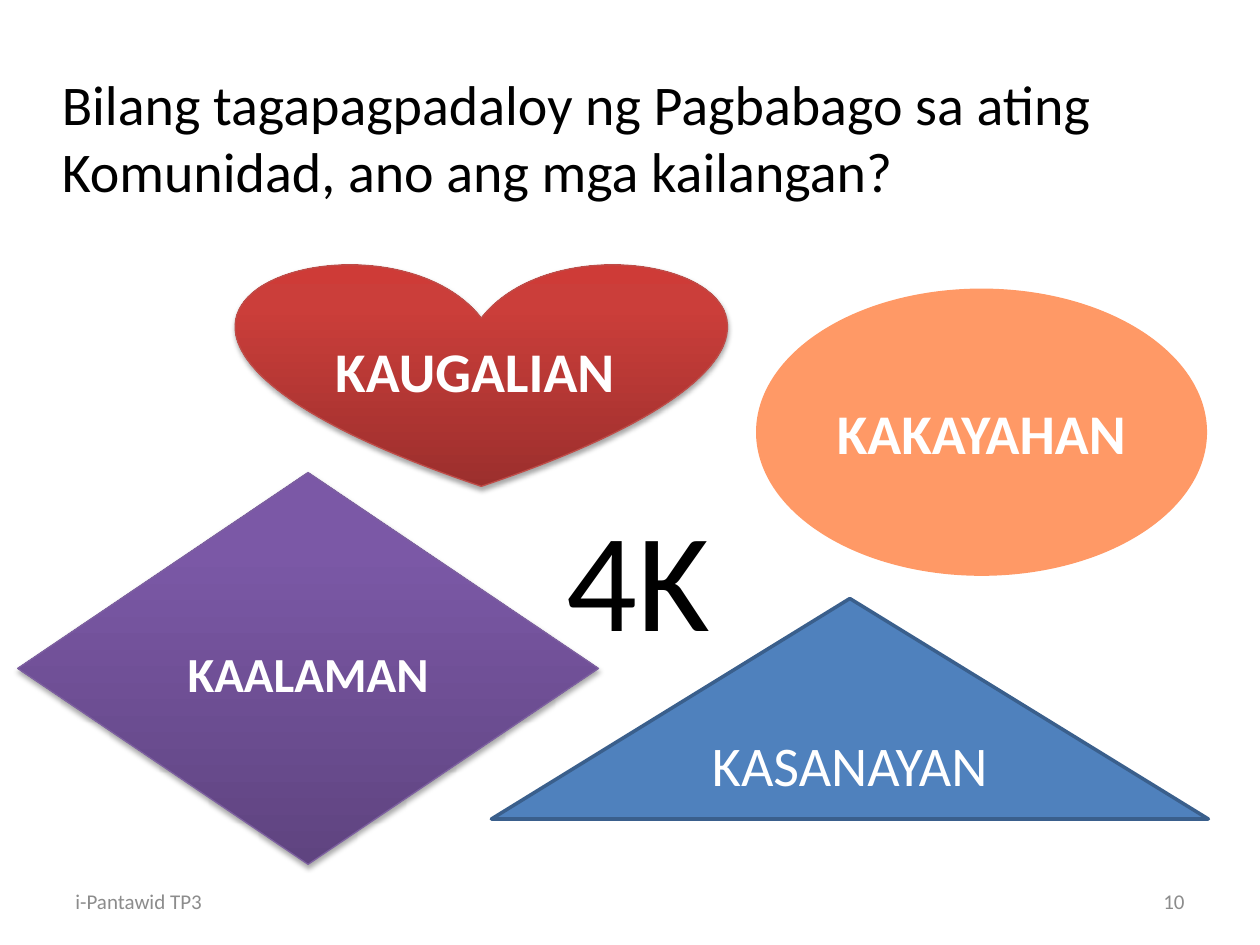
import copy

import lxml.etree
import pptx
import pptx.dml.color
import pptx.enum.shapes
import pptx.enum.text
import pptx.oxml.ns
import pptx.util

Inches = pptx.util.Inches
Pt = pptx.util.Pt
RGBColor = pptx.dml.color.RGBColor
Shape = pptx.enum.shapes.MSO_SHAPE
Align = pptx.enum.text.PP_ALIGN
Anchor = pptx.enum.text.MSO_ANCHOR
qn = pptx.oxml.ns.qn

BLACK = RGBColor(0x00, 0x00, 0x00)
WHITE = RGBColor(0xFF, 0xFF, 0xFF)
GRAY = RGBColor(0x8C, 0x8C, 0x8C)
ORANGE = RGBColor(0xFF, 0x99, 0x66)
BLUE = RGBColor(0x4F, 0x81, 0xBD)
DARK_BLUE = RGBColor(0x3A, 0x5F, 0x8C)
PURPLE_LINE = RGBColor(0x7D, 0x60, 0xA0)
RED_LINE = RGBColor(0xBF, 0x4C, 0x48)
PURPLES = (RGBColor(0x5F, 0x44, 0x80), RGBColor(0x7B, 0x58, 0xA6), RGBColor(0x7C, 0x57, 0xA8))
REDS = (RGBColor(0x9C, 0x2F, 0x2D), RGBColor(0xCB, 0x3E, 0x3A), RGBColor(0xCE, 0x3B, 0x37))
GRADIENT_POSITIONS = (0, 0.8, 1)

TITLE = "Bilang tagapagpadaloy ng Pagbabago sa ating Komunidad, ano ang mga kailangan?"
SPACED = {"line_spacing": 1.15, "space_after": 10}
NEEDS = [
    {"kind": Shape.DIAMOND, "area": (0.14, 3.75, 4.61, 3.11), "colors": PURPLES,
     "line": (PURPLE_LINE, 0.75), "text": "KAALAMAN",
     "format": {"size": 28, "bold": True, **SPACED}},
    {"kind": Shape.HEART, "area": (1.88, 2.08, 3.88, 1.78), "colors": REDS,
     "line": (RED_LINE, 0.75), "text": "KAUGALIAN ",
     "format": {"size": 32, "bold": True, **SPACED}},
    {"kind": Shape.OVAL, "area": (6, 2.29, 3.58, 2.28), "colors": (ORANGE,),
     "line": None, "text": "KAKAYAHAN", "format": {"size": 32, "bold": True}},
    {"kind": Shape.ISOSCELES_TRIANGLE, "area": (3.9, 4.75, 5.69, 1.75), "colors": (BLUE,),
     "line": (DARK_BLUE, 2), "text": "KASANAYAN", "format": {"size": 32}},
]
LABELS = [
    ("4K", (4.4, 3.85, 1.35, 1.45), {"size": 80, "color": BLACK, "wrap": False}),
    ("10", (7.17, 6.95, 2.33, 0.4),
     {"size": 12, "color": GRAY, "align": Align.RIGHT, "anchor": Anchor.MIDDLE}),
    ("i-Pantawid TP3", (0.5, 6.95, 2.33, 0.4),
     {"size": 12, "color": GRAY, "anchor": Anchor.MIDDLE}),
]


def write_text(box, text, *, size, color, bold=False, align=Align.LEFT,
               anchor=Anchor.TOP, wrap=True, line_spacing=None, space_after=None):
    frame = box.text_frame
    frame.word_wrap = wrap
    frame.auto_size = pptx.enum.text.MSO_AUTO_SIZE.NONE
    frame.vertical_anchor = anchor
    para = frame.paragraphs[0]
    para.alignment = align
    if line_spacing:
        para.line_spacing = line_spacing
    if space_after:
        para.space_after = Pt(space_after)
    span = para.add_run()
    span.text = text
    span.font.name = "Calibri"
    span.font.size = Pt(size)
    span.font.bold = bold
    span.font.color.rgb = color


def fill_gradient(shape, colors):
    shape.fill.gradient()
    shape.fill.gradient_angle = 90
    stop_list = shape._element.spPr.find(".//" + qn("a:gsLst"))
    stop_list.append(copy.deepcopy(stop_list[-1]))
    for stop, position, color in zip(shape.fill.gradient_stops, GRADIENT_POSITIONS, colors):
        stop.position = position
        stop.color.rgb = color


def add_shadow(shape):
    effects = shape._element.spPr.find(qn("a:effectLst"))
    shadow = lxml.etree.SubElement(
        effects, qn("a:outerShdw"), blurRad=str(Pt(3.1)), dist=str(Pt(1.8)),
        dir="5400000", rotWithShape="0")
    color = lxml.etree.SubElement(shadow, qn("a:srgbClr"), val="000000")
    lxml.etree.SubElement(color, qn("a:alpha"), val="35000")


def add_need(page, need):
    shape = page.shapes.add_shape(need["kind"], *map(Inches, need["area"]))
    shape.shadow.inherit = False
    if len(need["colors"]) > 1:
        fill_gradient(shape, need["colors"])
        add_shadow(shape)
    else:
        shape.fill.solid()
        shape.fill.fore_color.rgb = need["colors"][0]
    if need["line"]:
        color, width = need["line"]
        shape.line.color.rgb = color
        shape.line.width = Pt(width)
    else:
        shape.line.fill.background()
    write_text(shape, need["text"], color=WHITE, align=Align.CENTER,
               anchor=Anchor.MIDDLE, **need["format"])


def main():
    deck = pptx.Presentation()
    deck.slide_width, deck.slide_height = Inches(10), Inches(7.5)
    page = deck.slides.add_slide(deck.slide_layouts.get_by_name("Title Only"))

    title = page.shapes.title
    title.left, title.top, title.width, title.height = map(Inches, (0.39, 0.5, 8.53, 1.18))
    write_text(title, TITLE, size=32, color=BLACK)

    for need in NEEDS:
        add_need(page, need)
    for text, area, text_format in LABELS:
        write_text(page.shapes.add_textbox(*map(Inches, area)), text, **text_format)

    deck.save("out.pptx")


if __name__ == "__main__":
    main()
